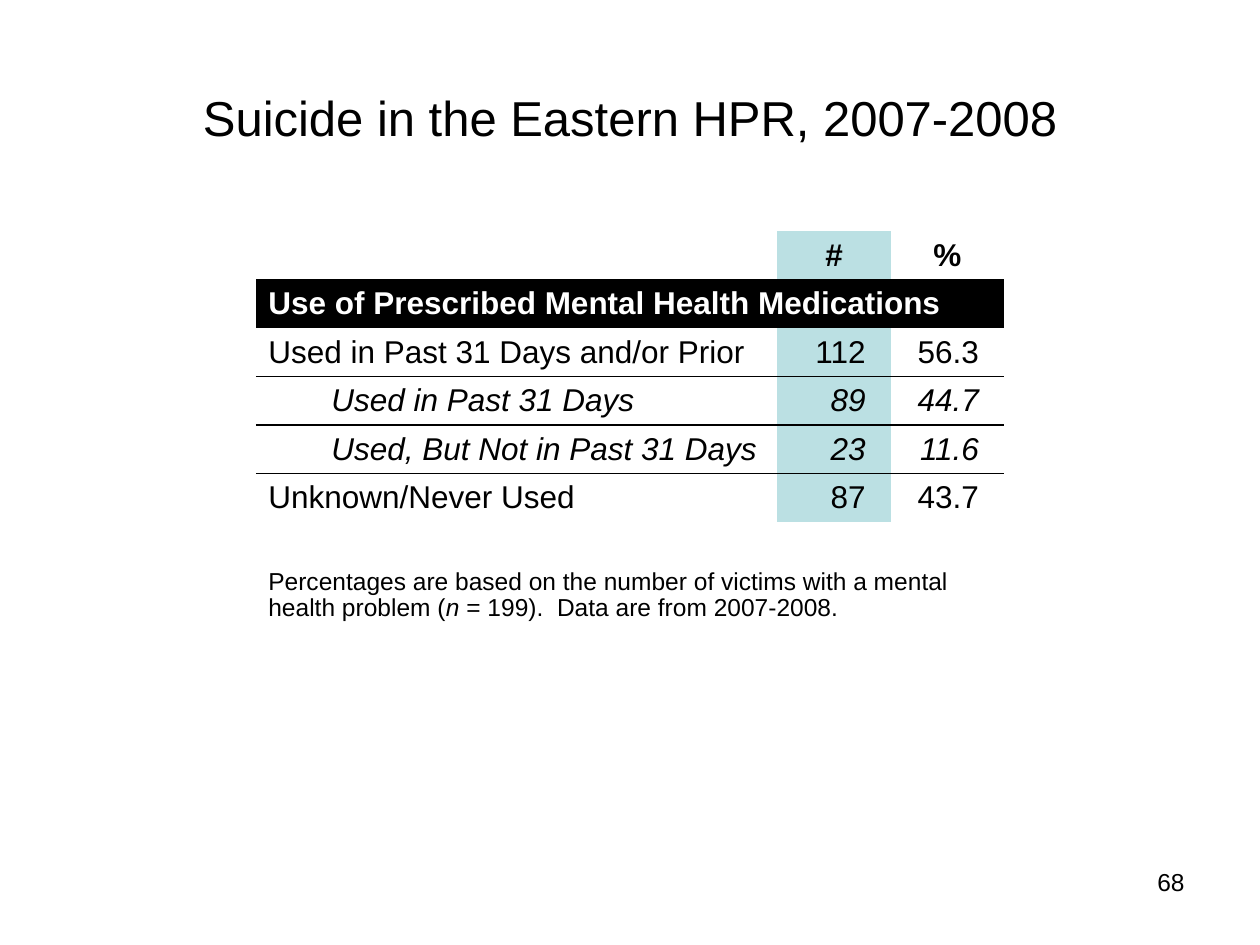
from dataclasses import dataclass

from lxml import etree
from pptx import Presentation
from pptx.dml.color import RGBColor
from pptx.enum.text import MSO_ANCHOR, PP_ALIGN
from pptx.oxml.ns import qn
from pptx.util import Inches, Pt


@dataclass(frozen=True)
class Theme:
    font: str = "Arial"
    black: RGBColor = RGBColor(0, 0, 0)
    white: RGBColor = RGBColor(255, 255, 255)
    accent: RGBColor = RGBColor(0xBB, 0xE0, 0xE3)
    title: int = 28
    body: int = 18
    note: int = 14
    rule: float = 1
    space_before: float = 0.4
    plain_table: str = "{2D5ABB26-0587-4C30-8999-92F81FD0307C}"


class SlideBuilder:
    """Draws styled elements on the current slide."""

    def __init__(self, prs, theme):
        self.theme = theme
        self.slide = prs.slides.add_slide(prs.slide_layouts[6])

    def style(self, p, size, color=None, align=PP_ALIGN.LEFT, bold=False):
        p.alignment = align
        p.font.name = self.theme.font
        p.font.size = Pt(size)
        p.font.bold = bold
        p.font.color.rgb = color or self.theme.black

    def text(self, box, text, size, align, anchor):
        sp = self.slide.shapes.add_textbox(*map(Inches, box))
        tf = sp.text_frame
        tf.word_wrap = True
        tf.vertical_anchor = anchor
        p = tf.paragraphs[0]
        p.add_run().text = text
        self.style(p, size, align=align)

    def table(self, left, top, widths, heights):
        frame = self.slide.shapes.add_table(
            len(heights), len(widths), Inches(left), Inches(top),
            Inches(sum(widths)), Inches(sum(heights)))
        table = frame.table
        table.first_row = table.horz_banding = False
        table._tbl.tblPr.find(qn("a:tableStyleId")).text = self.theme.plain_table
        for column, width in zip(table.columns, widths):
            column.width = Inches(width)
        for row, height in zip(table.rows, heights):
            row.height = Inches(height)
        for cell in table.iter_cells():
            cell.margin_top = cell.margin_bottom = 0
            cell.fill.background()
        return table

    def cell(self, cell, runs, size=None, color=None, align=PP_ALIGN.LEFT,
             bold=False, indent=0, right=0.1):
        cell.vertical_anchor = MSO_ANCHOR.BOTTOM
        cell.margin_top = cell.margin_bottom = Inches(0.05)
        cell.margin_left = Inches(0.1 + indent)
        cell.margin_right = Inches(right)
        p = cell.text_frame.paragraphs[0]
        self.style(p, size or self.theme.body, color, align, bold)
        p.line_spacing = 0.95
        p.space_before = Pt(self.theme.space_before)
        for text, italic in runs:
            r = p.add_run()
            r.text = text
            r.font.italic = italic

    def fill(self, cell, color):
        cell.fill.solid()
        cell.fill.fore_color.rgb = color

    def border(self, cell, side, visible=True):
        ln = etree.Element(qn(f"a:ln{side}"), w=str(Pt(self.theme.rule)))
        if visible:
            solid = etree.SubElement(ln, qn("a:solidFill"))
            etree.SubElement(solid, qn("a:srgbClr"), val=str(self.theme.black))
        else:
            etree.SubElement(ln, qn("a:noFill"))
        tc_pr = cell._tc.get_or_add_tcPr()
        tc_pr.insert(len(tc_pr.findall(qn("a:lnT"))), ln)


def main():
    theme = Theme()
    prs = Presentation()
    prs.slide_width, prs.slide_height = Inches(10), Inches(7.5)
    s = SlideBuilder(prs, theme)

    s.text((7.17, 6.83, 2.33, 0.52), "68", theme.note, PP_ALIGN.RIGHT, MSO_ANCHOR.TOP)
    s.text((0.5, 0.3, 9, 1.25), "Suicide in the Eastern HPR, 2007-2008",
           theme.title, PP_ALIGN.CENTER, MSO_ANCHOR.MIDDLE)

    table = s.table(2.03, 1.83, [4.14, 0.9, 0.9], [0.38] + [0.36] * 5 + [0.28, 0.53])
    for col, label in enumerate("#%", 1):
        s.cell(table.cell(0, col), [(label, False)], align=PP_ALIGN.CENTER, bold=True)
    s.fill(table.cell(0, 1), theme.accent)

    for row in (1, 7):
        table.cell(row, 0).merge(table.cell(row, 2))
    s.cell(table.cell(1, 0), [("Use of Prescribed Mental Health Medications", False)],
           color=theme.white, bold=True, right=0)
    s.fill(table.cell(1, 0), theme.black)

    usage = [
        ("Used in Past 31 Days and/or Prior", "112", "56.3", False),
        ("Used in Past 31 Days", "89", "44.7", True),
        ("Used, But Not in Past 31 Days", "23", "11.6", True),
        ("Unknown/Never Used", "87", "43.7", False),
    ]
    first, last = 2, 1 + len(usage)
    for row, (label, count, percent, detail) in enumerate(usage, first):
        s.cell(table.cell(row, 0), [(label, detail)], indent=0.5 if detail else 0)
        for col, value in enumerate((count, percent), 1):
            s.cell(table.cell(row, col), [(value, detail)], align=PP_ALIGN.RIGHT, right=0.2)
        s.fill(table.cell(row, 1), theme.accent)
        for col in range(3):
            s.border(table.cell(row, col), "T", visible=row > first)
            s.border(table.cell(row, col), "B", visible=row < last)
    for col in range(3):
        s.border(table.cell(last + 1, col), "T", visible=False)

    s.cell(table.cell(7, 0), [
        ("Percentages are based on the number of victims with a mental health problem (", False),
        ("n ", True),
        ("= 199).  Data are from 2007-2008.", False),
    ], size=theme.note, right=0)

    prs.save("out.pptx")


if __name__ == "__main__":
    main()
